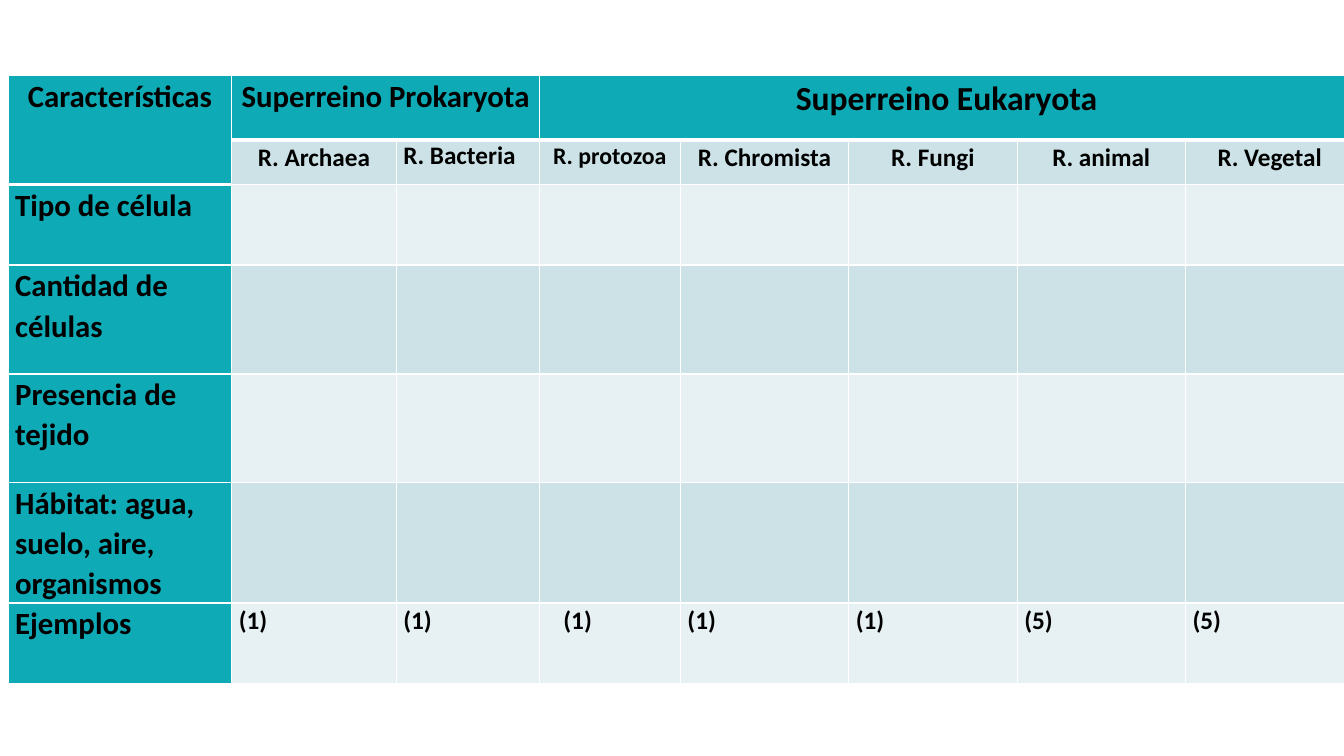
from lxml import etree
from pptx import Presentation
from pptx.dml.color import RGBColor
from pptx.enum.text import PP_ALIGN
from pptx.oxml.ns import qn
from pptx.util import Inches, Pt

LEFT, MID = PP_ALIGN.LEFT, PP_ALIGN.CENTER
TEAL, MIST, PALE = "0EABB7", "CCE2E6", "E7F1F3"
WHITE, BLACK = "FFFFFF", "000000"
WIDTHS = [16.65, 12.23, 10.65, 10.5] + [12.53] * 4
HEIGHTS = [8.53, 5.87, 10.67, 14.4, 14.4, 15.07, 10.67]
REALMS = ["R. Archaea", "R. Bacteria", "R. protozoa", "R. Chromista",
          "R. Fungi", "R. animal", "R. Vegetal"]
TRAITS = ["Tipo de célula", "Cantidad de células", "Presencia de tejido",
          "Hábitat: agua, suelo, aire, organismos", "Ejemplos"]
COUNTS = ["(1)"] * 5 + ["(5)"] * 2


def color(code):
    return RGBColor.from_string(code)


class Board:
    """Holds the style and the slide; lengths are percent of the slide."""
    font = "Calibri"
    inset = 0.53

    def __init__(self, deck):
        self.wide, self.high = deck.slide_width, deck.slide_height
        self.slide = deck.slides.add_slide(deck.slide_layouts[6])

    def x(self, share):
        return round(self.wide * share / 100)

    def y(self, share):
        return round(self.high * share / 100)

    def table(self, left, top, widths, heights):
        frame = self.slide.shapes.add_table(
            len(heights), len(widths), self.x(left), self.y(top),
            self.x(sum(widths)), self.y(sum(heights)))
        grid = frame.table
        grid.first_row = grid.horz_banding = False
        for col, width in zip(grid.columns, widths):
            col.width = self.x(width)
        for row, height in zip(grid.rows, heights):
            row.height = self.y(height)
        return grid

    def paint(self, cell, fill, top=1, base=1):
        """Draw white borders, then fill the cell and set its insets."""
        props = cell._tc.get_or_add_tcPr()
        for side, width in (("L", 1), ("R", 1), ("T", top), ("B", base)):
            line = etree.SubElement(props, qn("a:ln" + side), w=str(Pt(width)))
            solid = etree.SubElement(line, qn("a:solidFill"))
            etree.SubElement(solid, qn("a:srgbClr"), val=WHITE)
        cell.fill.solid()
        cell.fill.fore_color.rgb = color(fill)
        cell.margin_left = cell.margin_right = self.x(self.inset)
        cell.margin_top = cell.margin_bottom = 0

    def label(self, cell, text, size, align=LEFT, space=1.07):
        para = cell.text_frame.paragraphs[0]
        para.alignment, para.line_spacing = align, space
        run = para.add_run()
        run.text = text
        run.font.name, run.font.size, run.font.bold = self.font, Pt(size), True
        run.font.color.rgb = color(BLACK)


def main():
    deck = Presentation()
    deck.slide_width, deck.slide_height = Inches(13.33), Inches(7.5)
    board = Board(deck)
    grid = board.table(0.6, 10, WIDTHS, HEIGHTS)

    for row in range(len(HEIGHTS)):
        for col in range(len(WIDTHS)):
            head = 1 if col == 0 else 0
            band = MIST if row % 2 else PALE
            board.paint(grid.cell(row, col),
                        TEAL if row == 0 or col == 0 else band,
                        top=3 if row == head + 1 else 1,
                        base=3 if row == head else 1)

    for start, end, text, size in (((0, 0), (1, 0), "Características", 22),
                                   ((0, 1), (0, 2), "Superreino Prokaryota", 22),
                                   ((0, 3), (0, 7), "Superreino Eukaryota", 24)):
        grid.cell(*start).merge(grid.cell(*end))
        board.label(grid.cell(*start), text, size, MID)

    for col, (realm, count) in enumerate(zip(REALMS, COUNTS), 1):
        plain = realm == "R. Bacteria"
        board.label(grid.cell(1, col), realm, 17 if col == 3 else 18,
                    LEFT if plain else MID, 1.0 if plain else 1.07)
        board.label(grid.cell(6, col), count, 18)
    grid.cell(6, 3).margin_left = board.x(1.8)

    for row, trait in enumerate(TRAITS, 2):
        board.label(grid.cell(row, 0), trait, 22)

    deck.save("out.pptx")


if __name__ == "__main__":
    main()
